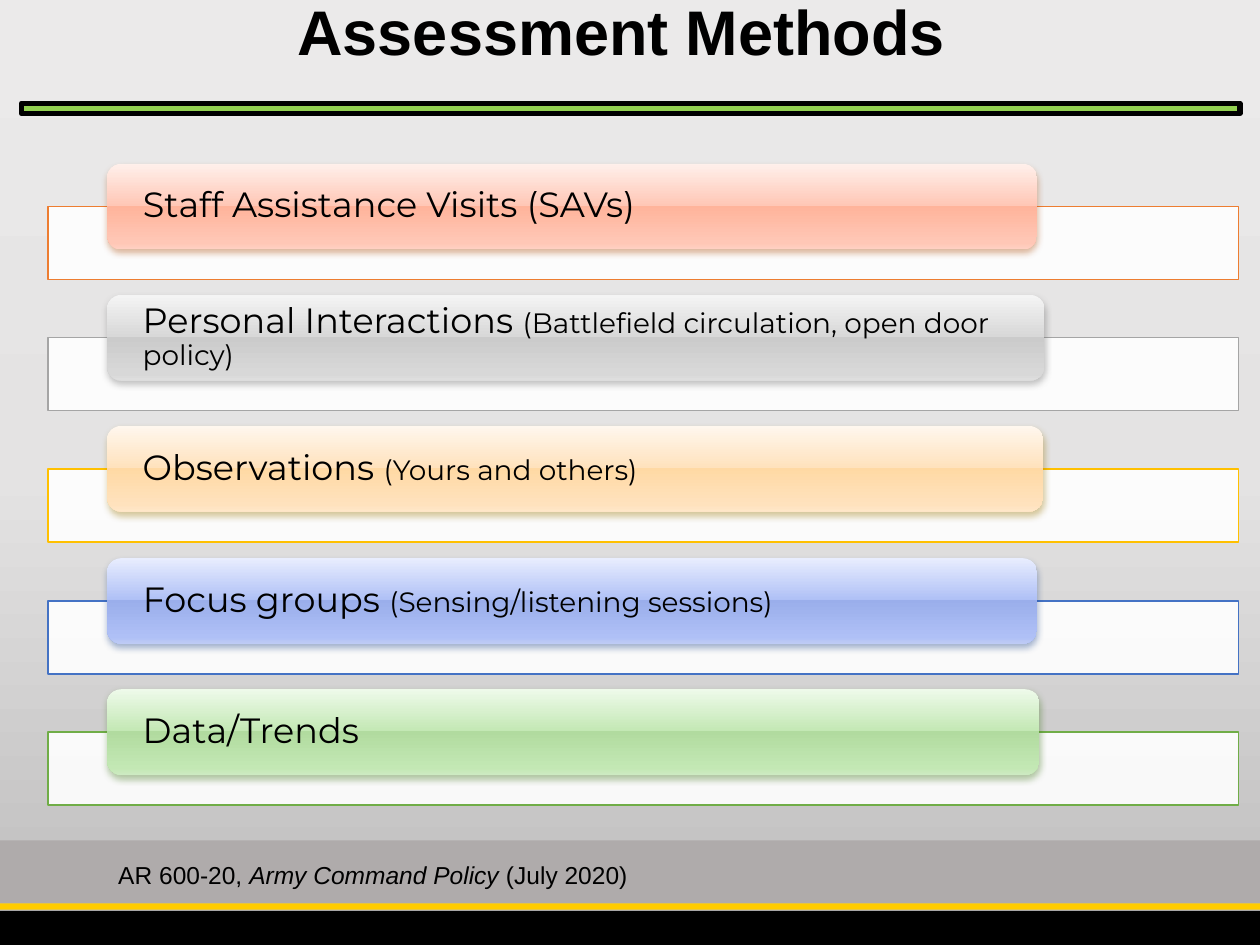
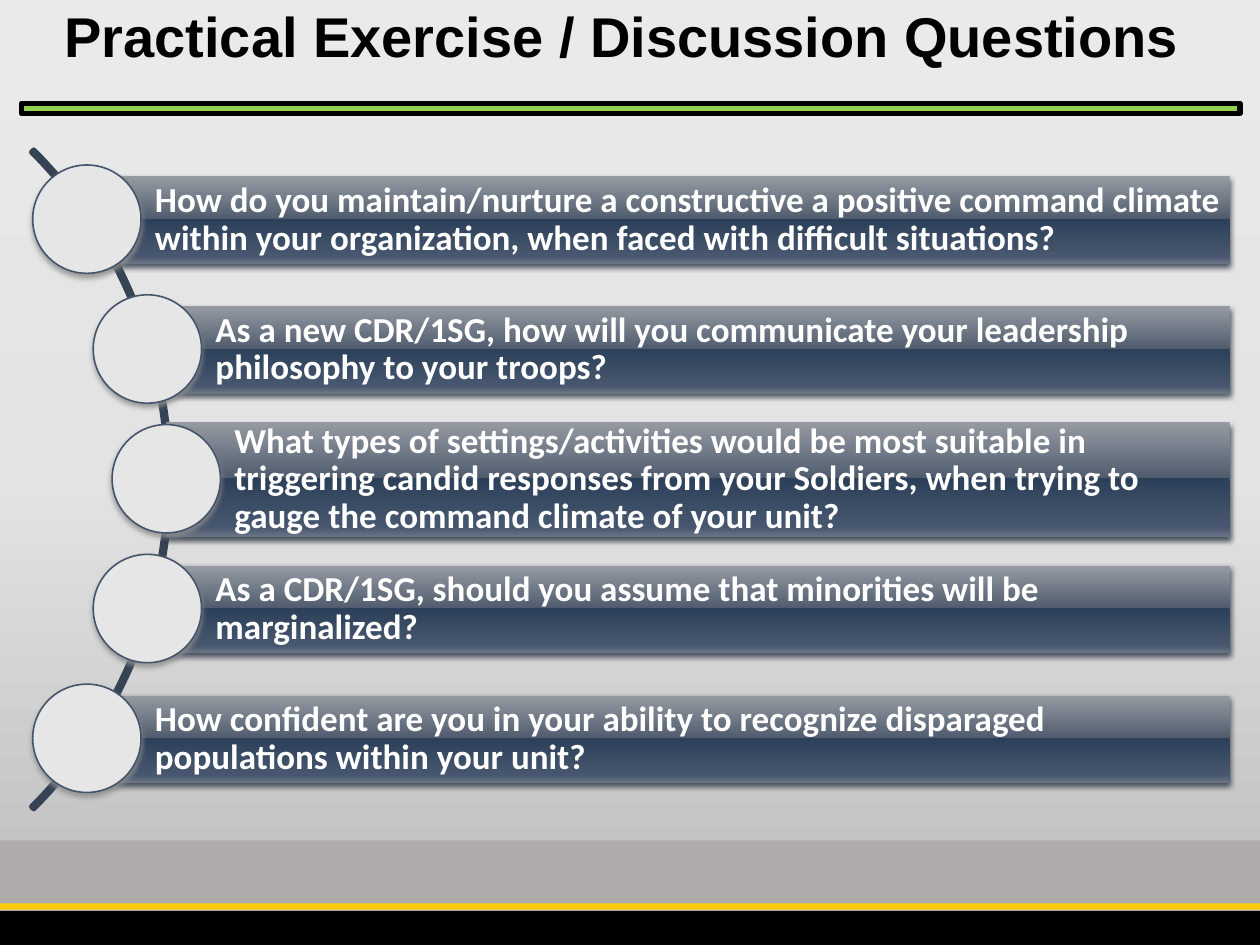
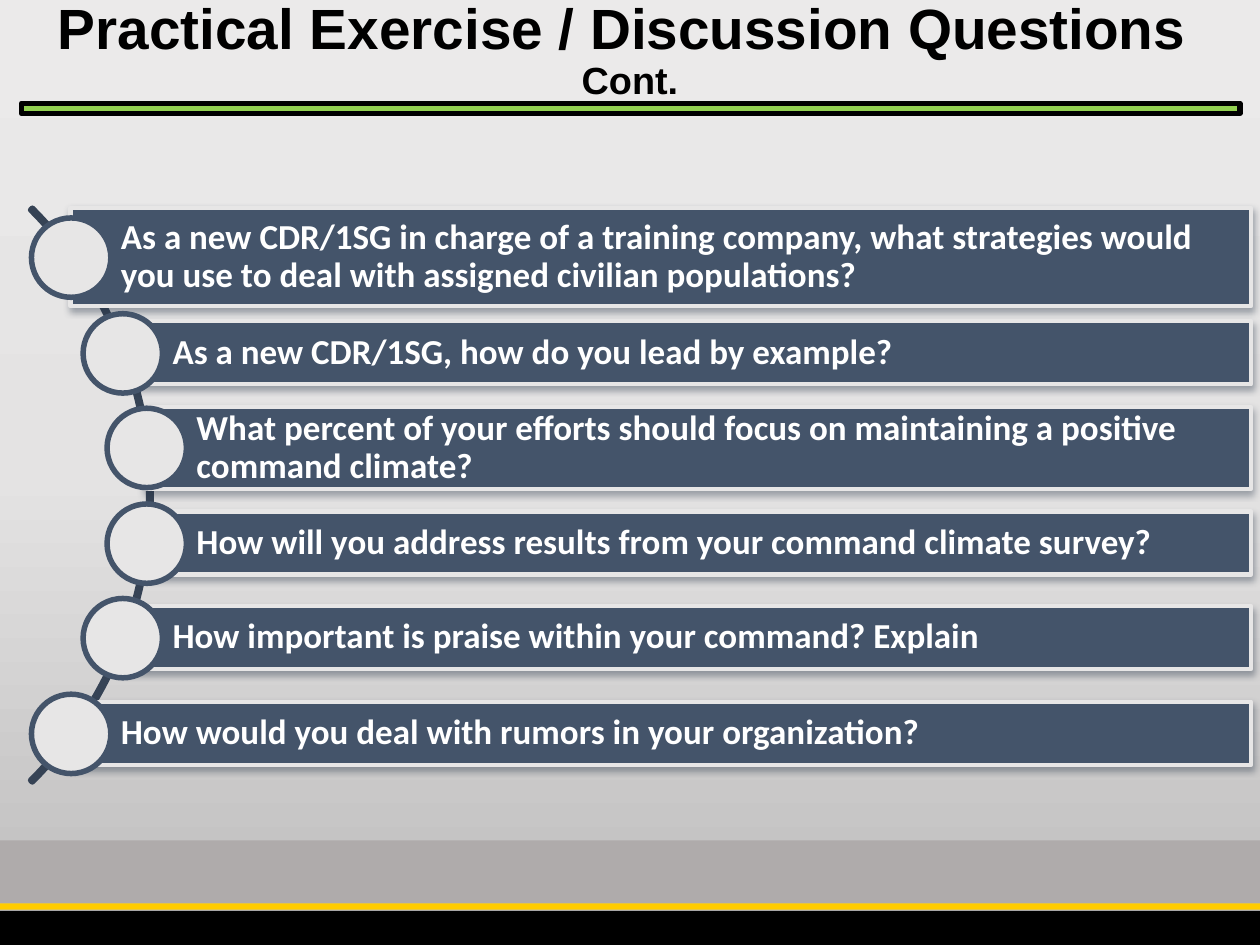
from dataclasses import dataclass
from math import sqrt
from typing import NamedTuple, Optional

from lxml import etree
from pptx import Presentation
from pptx.dml.color import RGBColor
from pptx.enum.shapes import MSO_SHAPE
from pptx.enum.text import MSO_ANCHOR, MSO_AUTO_SIZE, PP_ALIGN
from pptx.oxml.ns import qn
from pptx.util import Pt

PX = 9144  # EMU per px, 100 px to the inch
TITLE_ONLY = 5
TOP_TO_BOTTOM = 270

RECT = MSO_SHAPE.RECTANGLE
ROUNDED = MSO_SHAPE.ROUNDED_RECTANGLE
OVAL = MSO_SHAPE.OVAL
BLOCK_ARC = MSO_SHAPE.BLOCK_ARC
MIDDLE = MSO_ANCHOR.MIDDLE
CENTER = PP_ALIGN.CENTER
LEFT = PP_ALIGN.LEFT
NO_FIT = MSO_AUTO_SIZE.NONE
GROW = MSO_AUTO_SIZE.SHAPE_TO_FIT_TEXT


class Box(NamedTuple):
    x: int
    y: int
    w: int
    h: int


class Line(NamedTuple):
    color: str
    width: float


class Shadow(NamedTuple):
    color: str
    alpha: int
    blur: float
    dist: float


class Span(NamedTuple):
    text: str
    size: Optional[float] = None
    italic: Optional[bool] = None


class TextStyle(NamedTuple):
    font: str
    size: float
    color: str
    bold: bool = False
    align: PP_ALIGN = LEFT
    spacing: float = 0.9


@dataclass(frozen=True)
class Theme:
    black: str = "000000"
    white: str = "FFFFFF"
    gray: str = "AFABAB"
    gold: str = "FFCC00"
    green: str = "92D050"
    slate: str = "44546A"
    pale: str = "E7E6E6"
    arc: Line = Line("364355", 3.15)
    backdrop: tuple = ((0, "EBEAEA"), (50, "E4E3E3"), (100, "BDBCBC"))
    gloss_stops: tuple = (0, 49, 49, 92, 100)
    gloss_slate: tuple = ("969BA3", "505C6E", "2D4059", "47576F", "697485")
    method: TextStyle = TextStyle("Montserrat", 20, "000000")
    method_detail: float = 16
    question: TextStyle = TextStyle("Calibri", 20, "FFFFFF", bold=True)
    source: TextStyle = TextStyle("Arial", 14, "000000", spacing=1.0)
    title_large: float = 36
    title_medium: float = 32
    title_two_line: float = 32.4
    title_small: float = 21.6


THEME = Theme()


@dataclass(frozen=True)
class Method:
    spans: list[Span]
    width: int
    accent: str
    shadow: str
    gloss: tuple


@dataclass(frozen=True)
class QuestionList:
    """Bands with circles that follow an arc bulging to the right."""
    arc_x: int
    arc_size: int
    first: int  # centre of the first band
    last: int
    right: int
    circle: int
    inset: int
    fill: object
    band_line: Optional[Line]
    band_shadow: Shadow
    circle_line: Line
    circle_shadow: Optional[Shadow]
    questions: list[tuple[int, str]]  # band height, text


def rgb(value: str) -> RGBColor:
    return RGBColor.from_string(value)


def evenly(first: int, last: int, count: int) -> list[int]:
    return [round(first + (last - first) * i / (count - 1)) for i in range(count)]


def emu(box: Box) -> list[int]:
    return [v * PX for v in box]


def add_color(parent, value: str, alpha: int = 100) -> None:
    clr = etree.SubElement(parent, qn("a:srgbClr"), val=value)
    if alpha < 100:
        etree.SubElement(clr, qn("a:alpha"), val=str(alpha * 1000))


def fill_gradient(fill, element, stops) -> None:
    fill.gradient()
    fill.gradient_angle = TOP_TO_BOTTOM
    gs_lst = next(element.iter(qn("a:gsLst")))
    for old in list(gs_lst):
        gs_lst.remove(old)
    for pos, value in stops:
        add_color(etree.SubElement(gs_lst, qn("a:gs"), pos=str(pos * 1000)), value)


def gloss(colors: tuple) -> tuple:
    return tuple(zip(THEME.gloss_stops, colors))


def add_shape(s, kind, box: Box, fill=None, line: Optional[Line] = None,
              shadow: Optional[Shadow] = None, alpha: int = 100):
    """Fill is a colour, a tuple of gradient stops, or None for no fill."""
    sp = s.shapes.add_shape(kind, *emu(box))
    if fill is None:
        sp.fill.background()
    elif isinstance(fill, str):
        sp.fill.solid()
        sp.fill.fore_color.rgb = rgb(fill)
        if alpha < 100:
            clr = next(sp.element.spPr.iter(qn("a:srgbClr")))
            etree.SubElement(clr, qn("a:alpha"), val=str(alpha * 1000))
    else:
        fill_gradient(sp.fill, sp.element, fill)
    if line:
        sp.line.color.rgb = rgb(line.color)
        sp.line.width = Pt(line.width)
    else:
        sp.line.fill.background()
    sp.shadow.inherit = False
    if shadow:
        effects = sp.element.spPr.find(qn("a:effectLst"))
        outer = etree.SubElement(
            effects, qn("a:outerShdw"), blurRad=str(Pt(shadow.blur)),
            dist=str(Pt(shadow.dist)), dir="5400000", rotWithShape="0")
        add_color(outer, shadow.color, shadow.alpha)
    return sp


def write(tf, spans: list[Span], style: TextStyle) -> None:
    """Fill the first paragraph; a newline at the end of a span breaks the line."""
    tf.word_wrap = True
    p = tf.paragraphs[0]
    p.alignment = style.align
    p.line_spacing = style.spacing
    p.font.name = style.font
    p.font.size = Pt(style.size)
    p.font.bold = style.bold
    p.font.color.rgb = rgb(style.color)
    for span in spans:
        r = p.add_run()
        r.text = span.text.rstrip("\n")
        if span.size:
            r.font.size = Pt(span.size)
        if span.italic:
            r.font.italic = True
        if span.text.endswith("\n"):
            p.add_line_break()


def set_insets(tf, left: int, top: int, right: int, bottom: int) -> None:
    tf.margin_left, tf.margin_top = left * PX, top * PX
    tf.margin_right, tf.margin_bottom = right * PX, bottom * PX
    tf.vertical_anchor = MIDDLE


def style_master(prs, s) -> None:
    """Give the master its backdrop and footer bands, drawn on s and moved over."""
    master = prs.slide_master
    fill_gradient(master.background.fill, master.element, THEME.backdrop)
    bands = [(667, 50, THEME.gray), (717, 5, THEME.gold), (723, 27, THEME.black)]
    for i, (y, h, color) in enumerate(bands):
        sp = add_shape(s, RECT, Box(0, y, 1000, h), color)
        master.shapes.element.insert(2 + i, sp.element)


def add_titled_slide(prs, box: Box, spans: list[Span], size: float):
    s = prs.slides.add_slide(prs.slide_layouts[TITLE_ONLY])
    add_shape(s, RECT, Box(17, 82, 967, 8), THEME.green, Line(THEME.black, 3.15))
    title = s.shapes.title
    title.left, title.top, title.width, title.height = emu(box)
    tf = title.text_frame
    tf.auto_size = NO_FIT
    tf.vertical_anchor = MIDDLE
    write(tf, spans, TextStyle("Arial", size, THEME.black, True, CENTER))
    return s


def draw_methods(s, methods: list[Method]) -> None:
    for y, m in zip(evenly(164, 581, len(methods)), methods):
        add_shape(s, RECT, Box(38, y, 945, 58), THEME.white,
                  Line(m.accent, 0.9), alpha=90)
        pill = add_shape(s, ROUNDED, Box(85, y - 34, m.width, 68), gloss(m.gloss),
                         shadow=Shadow(m.shadow, 38, 4, 2))
        set_insets(pill.text_frame, 25, 0, 25, 0)
        write(pill.text_frame, m.spans, THEME.method)


def draw_source(s, spans: list[Span]) -> None:
    tf = s.shapes.add_textbox(*emu(Box(84, 678, 820, 34))).text_frame
    tf.auto_size = GROW
    write(tf, spans, THEME.source)


def draw_questions(s, q: QuestionList) -> None:
    radius = q.arc_size // 2
    mid_x, mid_y = q.arc_x + radius, (q.first + q.last) // 2
    arc = add_shape(s, BLOCK_ARC,
                    Box(q.arc_x, mid_y - radius, q.arc_size, q.arc_size),
                    line=THEME.arc)
    for i, value in enumerate((189, 27, 0.003)):
        arc.adjustments[i] = value
    centers = evenly(q.first, q.last, len(q.questions))
    for cy, (h, text) in zip(centers, q.questions):
        cx = mid_x + round(sqrt((radius - 2) ** 2 - (cy - mid_y) ** 2))
        band = add_shape(s, RECT, Box(cx, cy - h // 2, q.right - cx, h),
                         q.fill, q.band_line, q.band_shadow)
        set_insets(band.text_frame, q.inset, 6, 6, 6)
        write(band.text_frame, [Span(text)], THEME.question)
        half = q.circle // 2
        add_shape(s, OVAL, Box(cx - half, cy - half, q.circle, q.circle),
                  THEME.pale, q.circle_line, q.circle_shadow)


DETAIL = THEME.method_detail
METHODS = [
    Method([Span("Staff Assistance Visits (SAVs)")], 738, "ED7D31", "A84501",
           ("FFF0EB", "FFC7B6", "FFB49B", "FFC7B6", "FFD0C2")),
    Method([Span("Personal Interactions "),
            Span("(Battlefield circulation, open door policy)", DETAIL)],
           744, "A5A5A5", "626262",
           ("F4F4F4", "D8D8D8", "CBCBCB", "D8D8D8", "DEDEDE")),
    Method([Span("Observations "), Span("(Yours and others)", DETAIL)],
           743, "FFC000", "977200",
           ("FFF7EE", "FFE2BD", "FFD9A4", "FFE2BD", "FFE7C8")),
    Method([Span("Focus groups "), Span("(Sensing/listening sessions)", DETAIL)],
           738, "4472C4", "153E87",
           ("E8EDFE", "AFC0F6", "9AAEEB", "AFC0F6", "BECBF5")),
    Method([Span("Data/Trends")], 740, "70AD47", "3F761B",
           ("EEFAEA", "C3E8B4", "B1DB9F", "C3E8B4", "CDEAC2")),
]

CLIMATE_QUESTIONS = QuestionList(
    arc_x=-604, arc_size=739, first=174, last=586, right=976, circle=86, inset=54,
    fill=gloss(THEME.gloss_slate), band_line=None,
    band_shadow=Shadow("2A3441", 83, 3.1, 2),
    circle_line=Line(THEME.slate, 0.9),
    circle_shadow=Shadow("8F8E8E", 83, 3.1, 2),
    questions=[
        (69, "How do you maintain/nurture a constructive a positive command climate "
             "within your organization, when faced with difficult situations?"),
        (69, "As a new CDR/1SG, how will you communicate your leadership philosophy "
             "to your troops?"),
        (91, "What types of settings/activities would be most suitable in triggering "
             "candid responses from your Soldiers, when trying to gauge the command "
             "climate of your unit?"),
        (69, "As a CDR/1SG, should you assume that minorities will be marginalized?"),
        (69, "How confident are you in your ability to recognize disparaged "
             "populations within your unit?"),
    ])

LEADER_QUESTIONS = QuestionList(
    arc_x=-524, arc_size=644, first=204, last=582, right=993, circle=63, inset=40,
    fill=THEME.slate, band_line=Line(THEME.pale, 2.5),
    band_shadow=Shadow("233144", 38, 4, 2),
    circle_line=Line(THEME.slate, 3.15), circle_shadow=None,
    questions=[
        (78, "As a new CDR/1SG in charge of a training company, what strategies would "
             "you use to deal with assigned civilian populations?"),
        (50, "As a new CDR/1SG, how do you lead by example?"),
        (65, "What percent of your efforts should focus on maintaining a positive "
             "command climate?"),
        (50, "How will you address results from your command climate survey?"),
        (50, "How important is praise within your command? Explain"),
        (50, "How would you deal with rumors in your organization?"),
    ])


def main() -> None:
    prs = Presentation()
    prs.slide_width, prs.slide_height = 1000 * PX, 750 * PX

    s = add_titled_slide(prs, Box(69, 0, 862, 56),
                         [Span("Assessment Methods ")], THEME.title_large)
    style_master(prs, s)
    draw_methods(s, METHODS)
    draw_source(s, [Span("AR 600-20, "), Span("Army Command Policy ", italic=True),
                    Span("(July 2020)")])

    heading = "Practical Exercise / Discussion Questions "
    s = add_titled_slide(prs, Box(0, 0, 1000, 62), [Span(heading)],
                         THEME.title_medium)
    draw_questions(s, CLIMATE_QUESTIONS)

    s = add_titled_slide(prs, Box(0, 0, 1000, 82),
                         [Span(heading + "\n"), Span("Cont.", THEME.title_small)],
                         THEME.title_two_line)
    draw_questions(s, LEADER_QUESTIONS)

    prs.save("out.pptx")


if __name__ == "__main__":
    main()
